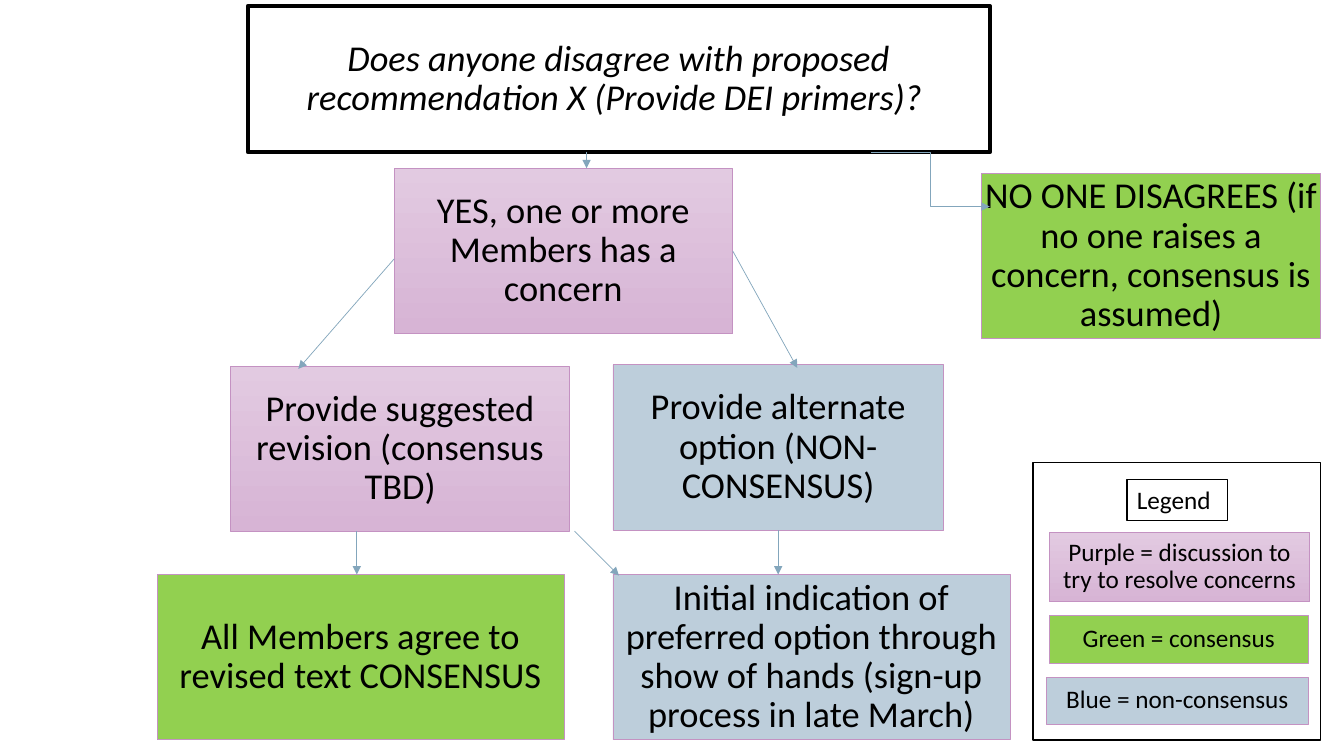
import pptx
import pptx.util
import pptx.dml.color
import pptx.enum.shapes
import pptx.enum.text
import pptx.oxml
import pptx.oxml.ns

Pt = pptx.util.Pt
PURPLE = ("E2CAE1", "D7B4D5")
GREEN = "92D050"
BLUE = "BDCEDB"
WHITE = "FFFFFF"
BLACK = "000000"
MAUVE = "C492C2"
STEEL = "83A6BC"
STRAIGHT = pptx.enum.shapes.MSO_CONNECTOR.STRAIGHT
ELBOW = pptx.enum.shapes.MSO_CONNECTOR.ELBOW
ROW_HEIGHT = 118.1


def color(hex_value):
    return pptx.dml.color.RGBColor.from_string(hex_value)


def add_panel(slide, bounds, fill, outline, weight):
    panel = slide.shapes.add_shape(
        pptx.enum.shapes.MSO_SHAPE.RECTANGLE, *[Pt(v) for v in bounds])
    panel.shadow.inherit = False
    if isinstance(fill, tuple):
        panel.fill.gradient()
        panel.fill.gradient_angle = 270
        for stop, shade in zip(panel.fill.gradient_stops, fill):
            stop.color.rgb = color(shade)
    else:
        panel.fill.solid()
        panel.fill.fore_color.rgb = color(fill)
    panel.line.color.rgb = color(outline)
    panel.line.width = Pt(weight)
    return panel


def write(panel, text, size, align, italic=None):
    panel.text_frame.word_wrap = True
    paragraph = panel.text_frame.paragraphs[0]
    paragraph.text = text
    paragraph.alignment = align
    paragraph.font.name = "Calibri"
    paragraph.font.size = Pt(size)
    paragraph.font.italic = italic
    paragraph.font.color.rgb = color(BLACK)
    return paragraph


def add_step(slide, bounds, fill, text, size=26, outline=MAUVE, weight=0.5, italic=None):
    step = add_panel(slide, bounds, fill, outline, weight)
    frame = step.text_frame
    frame.margin_left = frame.margin_right = Pt(1.4)
    frame.margin_top = frame.margin_bottom = Pt(1.4)
    frame.vertical_anchor = pptx.enum.text.MSO_ANCHOR.MIDDLE
    paragraph = write(step, text, size, pptx.enum.text.PP_ALIGN.CENTER, italic)
    paragraph.line_spacing = 0.9
    return step


def add_arrow(slide, start, end, kind=STRAIGHT):
    arrow = slide.shapes.add_connector(kind, *[Pt(v) for v in start + end])
    arrow.line.color.rgb = color(STEEL)
    arrow.line.width = Pt(0.5)
    head = pptx.oxml.parse_xml(
        f'<a:tailEnd {pptx.oxml.ns.nsdecls("a")} type="triangle"/>')
    arrow.line._get_or_add_ln().append(head)
    arrow._element.spPr.append(
        pptx.oxml.parse_xml(f'<a:effectLst {pptx.oxml.ns.nsdecls("a")}/>'))
    return arrow


def add_legend(slide):
    entries = [
        ((749.5, 439.9, 185, 33.8), GREEN, "Green = consensus"),
        ((749.5, 380.2, 186.1, 49.7), PURPLE,
         "Purple = discussion to try to resolve concerns"),
        ((747.4, 483.8, 187.2, 33.5), BLUE, "Blue = non-consensus"),
    ]
    for bounds, fill, text in entries:
        add_step(slide, bounds, fill, text, size=18)
    heading = add_panel(slide, (805, 342.7, 72, 29.1), WHITE, BLACK, 1)
    heading.text_frame.vertical_anchor = pptx.enum.text.MSO_ANCHOR.TOP
    write(heading, "Legend", 18, pptx.enum.text.PP_ALIGN.LEFT)


def main():
    deck = pptx.Presentation()
    deck.slide_width, deck.slide_height = Pt(960), Pt(540)
    slide = deck.slides.add_slide(deck.slide_layouts[6])

    add_panel(slide, (738, 330.5, 205.2, 198), WHITE, BLACK, 1)
    add_step(slide, (164.9, 261.4, 241.9, ROW_HEIGHT), PURPLE,
             "Provide suggested revision (consensus TBD)")
    concern = add_step(slide, (281.5, 120.2, 241.9, ROW_HEIGHT), PURPLE,
                       "YES, one or more Members has a concern")
    add_step(slide, (701.3, 123.8, 241.9, ROW_HEIGHT), GREEN,
             "NO ONE DISAGREES (if no one raises a concern, consensus is assumed)")
    add_step(slide, (112.3, 410.4, 290.6, ROW_HEIGHT), GREEN,
             "All Members agree to revised text CONSENSUS")
    add_step(slide, (177.1, 4.3, 529.9, 104.4), WHITE,
             "Does anyone disagree with proposed recommendation X (Provide DEI primers)? ",
             outline=BLACK, weight=3, italic=True)
    alternate = add_step(slide, (437.8, 260.6, 236.2, ROW_HEIGHT), BLUE,
                         "Provide alternate option (NON-CONSENSUS)")
    add_step(slide, (437.8, 410.4, 283.7, ROW_HEIGHT), BLUE,
             "Initial indication of preferred option through show of hands "
             "(sign-up process in late March)")

    add_arrow(slide, (622.1, 108.7), (707, 147.6), ELBOW)
    add_arrow(slide, (419, 108.7), (419, 120.2))
    add_arrow(slide, (281.5, 185), (213.1, 263.5))
    add_arrow(slide, (254.9, 379.4), (254.9, 410.4))
    add_arrow(slide, (410.4, 379.4), (442.1, 411.1))
    to_alternate = add_arrow(slide, (523.4, 179.3), (569.5, 262.8))
    to_alternate.begin_connect(concern, 3)
    to_indication = add_arrow(slide, (555.9, 378.7), (555.9, 410.4))
    to_indication.begin_connect(alternate, 2)

    add_legend(slide)
    deck.save("out.pptx")


if __name__ == "__main__":
    main()
